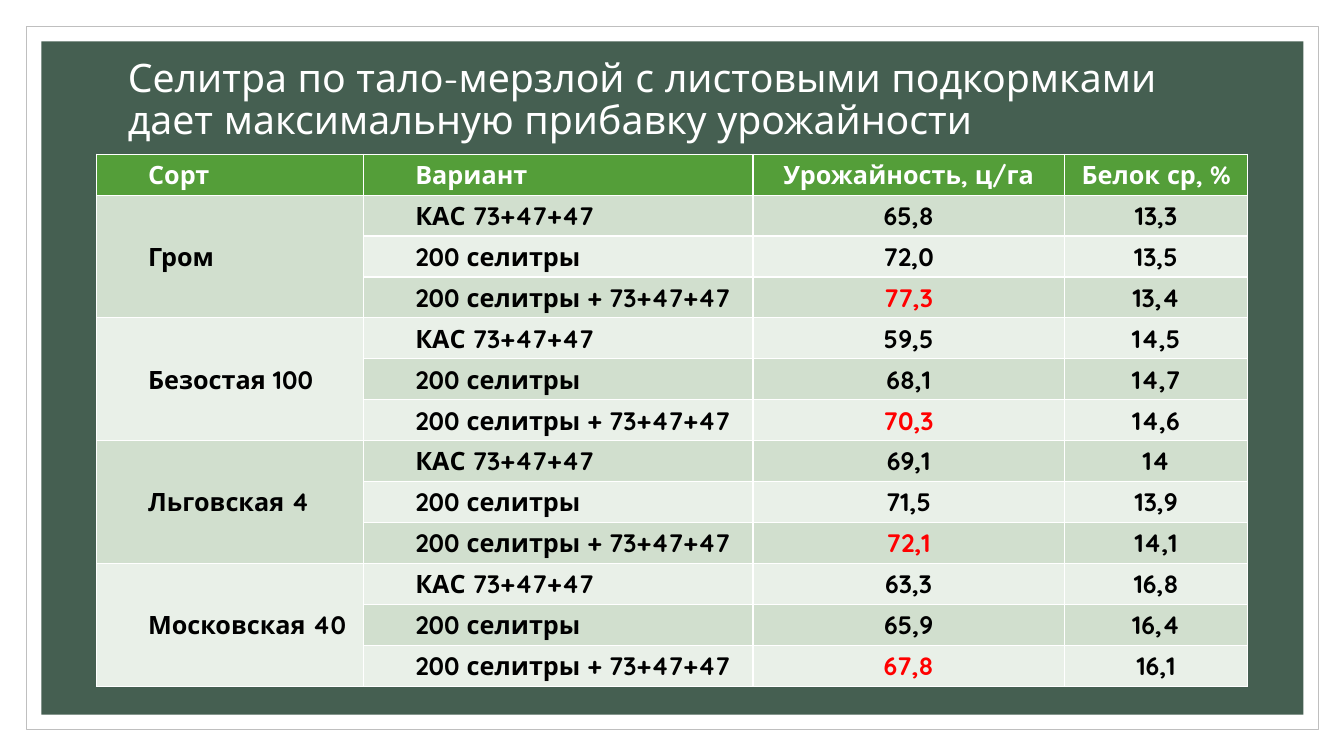
from lxml.etree import SubElement
from pptx import Presentation
from pptx.dml.color import RGBColor
from pptx.enum.shapes import MSO_SHAPE as Shape
from pptx.enum.text import MSO_ANCHOR as Anchor, PP_ALIGN as Align
from pptx.oxml import parse_xml
from pptx.oxml.ns import nsdecls, qn
from pptx.util import Pt

FONT = "Quicksand"
WHITE, BLACK, RED = "FFFFFF", "000000", "FF0000"
FRAME_GRAY, DARK_GREEN, HEADER_GREEN = "BFBFBF", "455F51", "549E39"
BANDS = ["D1DFCE", "E9F0E8"]

TITLE = "Селитра по тало-мерзлой с листовыми подкормками дает максимальную прибавку урожайности"
HEADERS = ["Сорт", "Вариант", "Урожайность, ц/га", "Белок ср, %"]
VARIANTS = ["КАС 73+47+47", "200 селитры", "200 селитры + 73+47+47"]
# Variety: yield and protein for each variant
RESULTS = {
    "Гром": [("65,8", "13,3"), ("72,0", "13,5"), ("77,3", "13,4")],
    "Безостая 100": [("59,5", "14,5"), ("68,1", "14,7"), ("70,3", "14,6")],
    "Льговская 4": [("69,1", "14"), ("71,5", "13,9"), ("72,1", "14,1")],
    "Московская 40": [("63,3", "16,8"), ("65,9", "16,4"), ("67,8", "16,1")],
}
COLUMN_WIDTHS = [190.8, 277.92, 222.48, 131.04]


def color(hex_string):
    return RGBColor.from_string(hex_string)


def write(frame, text, size=18, font_color=BLACK, bold=False, align=Align.LEFT,
          indent=0, line_spacing=1.0):
    paragraph = frame.paragraphs[0]
    paragraph.alignment = align
    paragraph.line_spacing = line_spacing
    if indent:
        paragraph.level = 1
        properties = paragraph._p.get_or_add_pPr()
        properties.set("marL", str(Pt(indent)))
        properties.set("indent", "0")
    run = paragraph.add_run()
    run.text = text
    run.font.name = FONT
    run.font.size = Pt(size)
    run.font.bold = bold
    run.font.color.rgb = color(font_color)
    for tag in ("a:ea", "a:cs"):
        SubElement(run._r.rPr, qn(tag), typeface=FONT)


def add_panel(slide, box, fill, line=None):
    shape = slide.shapes.add_shape(Shape.RECTANGLE, *map(Pt, box))
    shape.shadow.inherit = False
    shape.fill.solid()
    shape.fill.fore_color.rgb = color(fill)
    if line:
        shape.line.color.rgb = color(line)
        shape.line.width = Pt(0.5)
    else:
        shape.line.fill.background()


def add_background(slide, box):
    left, top, width, height = box
    gap = 10.8
    add_panel(slide, box, WHITE, line=FRAME_GRAY)
    add_panel(slide, (left + gap, top + gap, width - 2 * gap, height - 2 * gap), DARK_GREEN)


def add_title(slide, box):
    frame = slide.shapes.add_textbox(*map(Pt, box)).text_frame
    frame.word_wrap = True
    frame.vertical_anchor = Anchor.MIDDLE
    write(frame, TITLE, size=28, font_color=WHITE, line_spacing=0.9)


def style_cell(cell, fill):
    cell.margin_left = cell.margin_right = cell.margin_top = Pt(0.72)
    cell.margin_bottom = 0
    cell.vertical_anchor = Anchor.MIDDLE
    cell.fill.solid()
    cell.fill.fore_color.rgb = color(fill)
    # White borders come before the fill in the cell properties
    for position, side in enumerate(("lnL", "lnR", "lnT", "lnB")):
        border = parse_xml(
            f'<a:{side} {nsdecls("a")} w="{Pt(1)}"><a:solidFill>'
            f'<a:srgbClr val="{WHITE}"/></a:solidFill></a:{side}>')
        cell._tc.get_or_add_tcPr().insert(position, border)


def add_results_table(slide, box):
    rows = [HEADERS]
    for variety, values in RESULTS.items():
        for index, (variant, pair) in enumerate(zip(VARIANTS, values)):
            rows.append(["" if index else variety, variant, *pair])
    table = slide.shapes.add_table(len(rows), len(HEADERS), *map(Pt, box)).table
    for column, width in zip(table.columns, COLUMN_WIDTHS):
        column.width = Pt(width)
    for row in table.rows:
        row.height = Pt(box[3] / len(rows))

    for row_index, texts in enumerate(rows):
        is_header = row_index == 0
        fill = HEADER_GREEN if is_header else BANDS[(row_index - 1) % 2]
        for column_index, text in enumerate(texts):
            cell = table.cell(row_index, column_index)
            style_cell(cell, fill)
            if not text:
                continue
            # The last variant of each variety has the highest yield
            is_best = column_index == 2 and texts[1] == VARIANTS[-1]
            is_label = column_index < 2
            write(cell.text_frame, text, bold=True,
                  font_color=WHITE if is_header else RED if is_best else BLACK,
                  align=Align.LEFT if is_label else Align.CENTER,
                  indent=36 if is_label else 0)

    # One variety cell spans its variants
    span = len(VARIANTS)
    for first in range(1, len(rows), span):
        table.cell(first, 0).merge(table.cell(first + span - 1, 0))


def main():
    presentation = Presentation()
    presentation.slide_width, presentation.slide_height = Pt(960), Pt(540)
    slide = presentation.slides.add_slide(presentation.slide_layouts[6])
    add_background(slide, (18.72, 18.72, 923.04, 502.56))
    add_title(slide, (84.24, 18, 792, 108))
    add_results_table(slide, (69.12, 110.16, sum(COLUMN_WIDTHS), 380.25))
    presentation.save("out.pptx")


if __name__ == "__main__":
    main()
